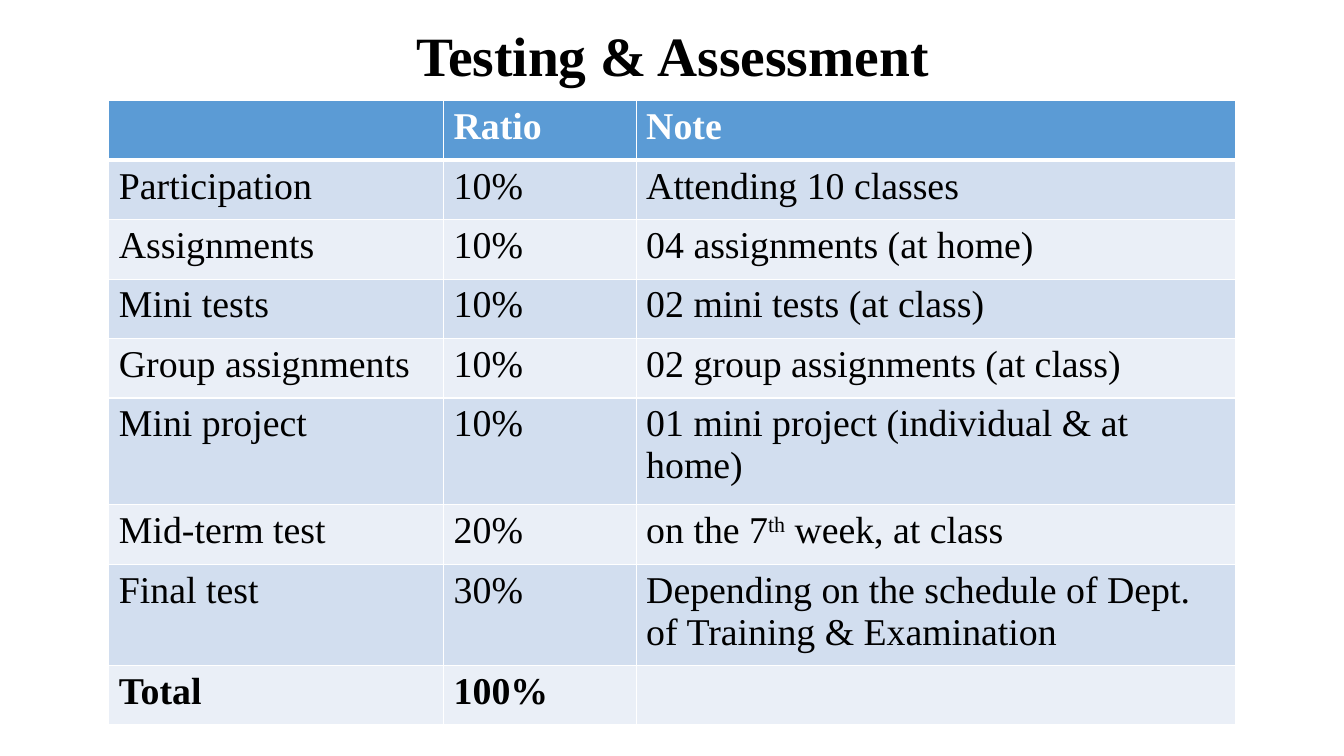
from lxml import etree
from pptx import Presentation
from pptx import util as u
from pptx.dml.color import RGBColor
from pptx.enum import text
from pptx.oxml import ns

WIDTH, HEIGHT = 13.33, 7.5
FONT = "Times New Roman"
HEADER, BANDS = "5B9BD5", ("EAEFF7", "D2DEEF")
COLUMNS = (3.32, 1.91, 5.95)
ROW, TALL_ROW = 0.59, 1.06
ASSESSMENTS = [
    ("", "Ratio", "Note"),
    ("Participation", "10%", "Attending 10 classes"),
    ("Assignments", "10%", "04 assignments (at home)"),
    ("Mini tests", "10%", "02 mini tests (at class)"),
    ("Group assignments", "10%", "02 group assignments (at class)"),
    ("Mini project", "10%", "01 mini project (individual & at home)"),
    ("Mid-term test", "20%", "on the 7^th^ week, at class"),
    ("Final test", "30%", "Depending on the schedule of Dept. of Training & Examination"),
    ("Total", "100%", ""),
]


def color(value):
    return RGBColor.from_string(value)


def add_runs(paragraph, wording, size, ink, bold):
    for index, piece in enumerate(wording.split("^")):
        if not piece:
            continue
        run = paragraph.add_run()
        run.text = piece
        run.font.name = FONT
        run.font.size = u.Pt(size)
        run.font.bold = bold
        run.font.color.rgb = color(ink)
        if index % 2:
            run.font._element.set("baseline", "30000")


def add_border(cell, side, points):
    line = etree.SubElement(cell._tc.get_or_add_tcPr(), ns.qn(f"a:ln{side}"),
                            w=str(u.Pt(points)))
    fill = etree.SubElement(line, ns.qn("a:solidFill"))
    etree.SubElement(fill, ns.qn("a:srgbClr"), val="FFFFFF")


def add_title(slide, left, top, width, height):
    frame = slide.shapes.add_textbox(*map(u.Inches, (left, top, width, height))).text_frame
    frame.word_wrap = True
    frame.vertical_anchor = text.MSO_ANCHOR.MIDDLE
    heading = frame.paragraphs[0]
    heading.alignment = text.PP_ALIGN.CENTER
    heading.line_spacing = 0.9
    add_runs(heading, "Testing & Assessment", 39.6, "000000", True)


def add_assessments(slide, left, top, width, height):
    grid = slide.shapes.add_table(len(ASSESSMENTS), len(COLUMNS),
                                  *map(u.Inches, (left, top, width, height))).table
    for column, share in zip(grid.columns, COLUMNS):
        column.width = u.Inches(width * share / sum(COLUMNS))
    last = len(ASSESSMENTS) - 1
    for r, entries in enumerate(ASSESSMENTS):
        grid.rows[r].height = u.Inches(TALL_ROW if entries[0] == "Mini project" else ROW)
        for c, wording in enumerate(entries):
            cell = grid.cell(r, c)
            for side in "LRTB":
                under_header = (r, side) in ((0, "B"), (1, "T"))
                add_border(cell, side, 3 if under_header else 1)
            cell.fill.solid()
            cell.fill.fore_color.rgb = color(BANDS[r % 2] if r else HEADER)
            add_runs(cell.text_frame.paragraphs[0], wording, 27,
                     "000000" if r else "FFFFFF", r in (0, last))


def main():
    deck = Presentation()
    deck.slide_width, deck.slide_height = u.Inches(WIDTH), u.Inches(HEIGHT)
    slide = deck.slides.add_slide(deck.slide_layouts[6])
    add_title(slide, 0.92, 0.2, 11.5, 0.76)
    add_assessments(slide, 1.08, 1, sum(COLUMNS), ROW * (len(ASSESSMENTS) - 1) + TALL_ROW)
    deck.save("out.pptx")


if __name__ == "__main__":
    main()
